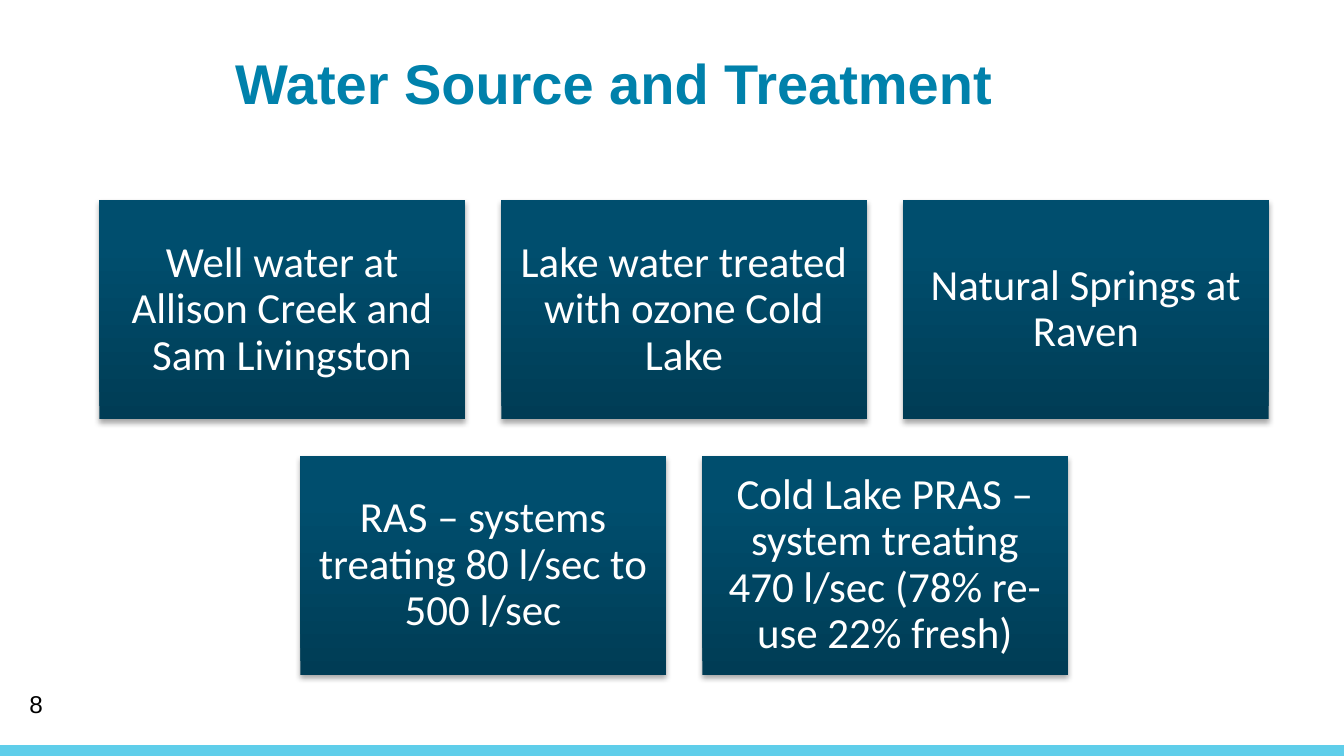
from lxml import etree
from pptx import Presentation
from pptx.dml.color import RGBColor
from pptx.enum import shapes, text
from pptx.oxml.ns import qn
from pptx.util import Inches, Pt

SLIDE_W = 10
SLIDE_H = SLIDE_W * 9 / 16
CARD_W, CARD_H, GAP = 2.72, 1.63, 0.27
CARD_ROWS = [
    ["Well water at Allison Creek and Sam Livingston",
     "Lake water treated with ozone Cold Lake",
     "Natural Springs at Raven"],
    ["RAS – systems treating 80 l/sec to 500 l/sec",
     "Cold Lake PRAS – system treating 470 l/sec (78% re-use 22% fresh)"],
]


def rgb(value):
    return RGBColor.from_string(value)


def write(sp, words, size, color, font="Arial", bold=False,
          align=text.PP_ALIGN.LEFT, anchor=text.MSO_ANCHOR.MIDDLE,
          insets=(0.1, 0.05, 0.1, 0.05)):
    tf = sp.text_frame
    tf.word_wrap = True
    tf.auto_size = text.MSO_AUTO_SIZE.NONE
    tf.vertical_anchor = anchor
    (tf.margin_left, tf.margin_top,
     tf.margin_right, tf.margin_bottom) = map(Inches, insets)
    p = tf.paragraphs[0]
    p.alignment = align
    p.line_spacing = 0.9
    p.space_before = Pt(0)
    r = p.add_run()
    r.text = words
    r.font.name, r.font.size, r.font.bold = font, Pt(size), bold
    r.font.color.rgb = rgb(color)


def add_rect(slide, left, top, width, height):
    sp = slide.shapes.add_shape(
        shapes.MSO_SHAPE.RECTANGLE, *map(Inches, (left, top, width, height)))
    sp.shadow.inherit = False
    sp.line.fill.background()
    return sp


def add_shadow(sp):
    effects = sp._element.spPr.find(qn("a:effectLst"))
    shadow = etree.SubElement(
        effects, qn("a:outerShdw"), blurRad=str(Pt(3.1)), dist=str(Pt(1.8)),
        dir="5400000", rotWithShape="0")
    color = etree.SubElement(shadow, qn("a:srgbClr"), val="000000")
    etree.SubElement(color, qn("a:alpha"), val="35000")


def add_title(slide, left, top, width, height):
    title = slide.shapes.title
    title.left, title.top, title.width, title.height = map(
        Inches, (left, top, width, height))
    write(title, "Water Source and Treatment", 30, "0081AB", bold=True,
          anchor=text.MSO_ANCHOR.TOP, insets=(1.16, 0.05, 0.1, 0.05))


def add_card(slide, left, top, words):
    sp = add_rect(slide, left, top, CARD_W, CARD_H)
    # Dark at the bottom, lighter towards the top
    sp.fill.gradient()
    sp.fill.gradient_angle = 90
    for stop, position, color in zip(
            sp.fill.gradient_stops, (0, 0.8), ("003C55", "004E6E")):
        stop.position = position
        stop.color.rgb = rgb(color)
    add_shadow(sp)
    write(sp, words, 23, "FFFFFF", font="Calibri",
          align=text.PP_ALIGN.CENTER, insets=(0.1,) * 4)


def add_cards(slide, left, top, width):
    """Stack the rows of cards, each row centred in the width."""
    for i, row in enumerate(CARD_ROWS):
        row_w = len(row) * (CARD_W + GAP) - GAP
        row_left = left + (width - row_w) / 2
        for j, words in enumerate(row):
            add_card(slide, row_left + j * (CARD_W + GAP),
                     top + i * (CARD_H + GAP), words)


def add_footer(slide, left, top, width, height):
    # Accent bar along the bottom edge
    bar = add_rect(slide, left, top + height - 0.08, width, 0.08)
    bar.fill.solid()
    bar.fill.fore_color.rgb = rgb("5FCEEA")
    # Slide number
    number = slide.shapes.add_textbox(
        *map(Inches, (left + 0.12, top, 2.25, 0.3)))
    write(number, "8", 13, "000000")


def main():
    prs = Presentation()
    prs.slide_width, prs.slide_height = Inches(SLIDE_W), Inches(SLIDE_H)
    slide = prs.slides.add_slide(prs.slide_layouts[5])
    add_footer(slide, 0, 5.1, SLIDE_W, SLIDE_H - 5.1)
    add_title(slide, 0.59, 0.37, 8.99, 0.57)
    add_cards(slide, 0.74, 1.49, 8.7)
    prs.save("out.pptx")


if __name__ == "__main__":
    main()
